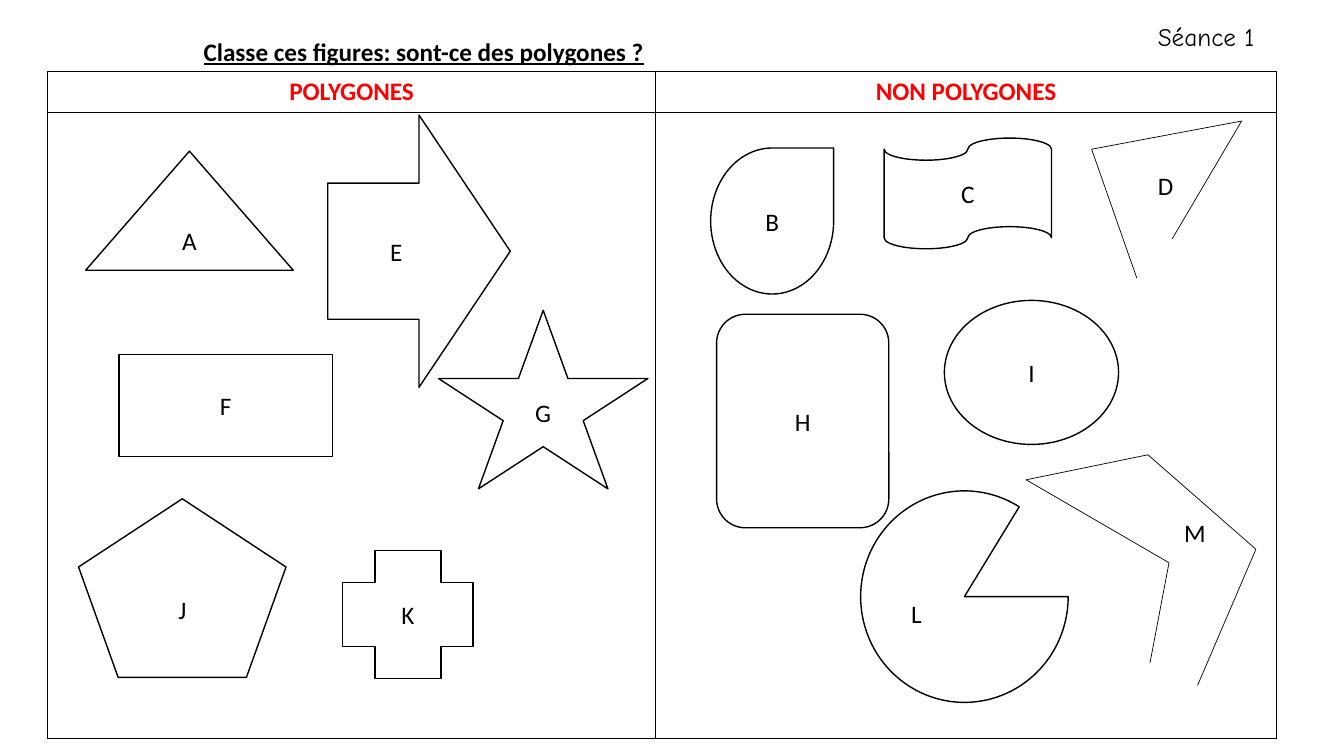
"""Build a worksheet slide that sorts figures into polygons and non-polygons."""
from itertools import pairwise

from lxml.etree import SubElement
from pptx import Presentation
from pptx.dml.color import RGBColor
from pptx.enum.shapes import MSO_CONNECTOR, MSO_SHAPE as SHAPE
from pptx.enum.text import MSO_ANCHOR, MSO_AUTO_SIZE, PP_ALIGN
from pptx.oxml.ns import qn
from pptx.util import Cm, Pt

BLACK = RGBColor(0x00, 0x00, 0x00)
WHITE = RGBColor(0xFF, 0xFF, 0xFF)
RED = RGBColor(0xFF, 0x00, 0x00)


def write(frame, text, color=BLACK, font="Calibri", bold=False, underline=False, align=PP_ALIGN.CENTER):
    para = frame.paragraphs[0]
    para.alignment = align
    span = para.add_run()
    span.text = text
    span.font.name = font
    span.font.size = Pt(18)
    span.font.bold = bold
    span.font.underline = underline
    span.font.color.rgb = color


def add_figure(shapes, kind, place):
    figure = shapes.add_shape(kind, *map(Cm, place))
    figure.shadow.inherit = False
    figure.fill.solid()
    figure.fill.fore_color.rgb = WHITE
    figure.line.color.rgb = BLACK
    figure.line.width = Pt(1)
    return figure


deck = Presentation()
deck.slide_width, deck.slide_height = Cm(33.87), Cm(19.05)
page = deck.slides.add_slide(deck.slide_layouts[6])

table = page.shapes.add_table(2, 2, Cm(1.2), Cm(1.8), Cm(30.97), Cm(16.8)).table
table.first_row = table.horz_banding = False
for column, width in zip(table.columns, (15.32, 15.65)):
    column.width = Cm(width)
for row, height in zip(table.rows, (1.04, 15.76)):
    row.height = Cm(height)
for cell in table.iter_cells():
    properties = cell._tc.get_or_add_tcPr()
    for side in ("a:lnL", "a:lnR", "a:lnT", "a:lnB"):
        border = SubElement(properties, qn(side), w=str(Pt(1)))
        SubElement(SubElement(border, qn("a:solidFill")), qn("a:srgbClr"), val=str(BLACK))
    cell.fill.background()
for column, heading in enumerate(("POLYGONES", "NON POLYGONES")):
    write(table.cell(0, column).text_frame, heading, RED, bold=True)

figures = [
    ("A", SHAPE.ISOSCELES_TRIANGLE, (2.16, 3.81, 5.23, 3)),
    ("F", SHAPE.RECTANGLE, (3, 8.94, 5.38, 2.57)),
    ("E", SHAPE.RIGHT_ARROW, (8.26, 2.9, 4.6, 6.86)),
    ("G", SHAPE.STAR_5_POINT, (11.05, 7.82, 5.28, 4.5)),
    ("H", SHAPE.ROUNDED_RECTANGLE, (18.06, 7.92, 4.34, 5.38)),
    ("I", SHAPE.OVAL, (23.8, 7.57, 4.39, 3.63)),
    ("J", SHAPE.REGULAR_PENTAGON, (1.98, 12.57, 5.23, 4.5)),
    ("K", SHAPE.CROSS, (8.64, 13.87, 3.28, 3.23)),
    ("B", SHAPE.TEAR, (17.91, 3.73, 3.1, 3.68)),
    ("C", SHAPE.FLOWCHART_PUNCHED_TAPE, (22.28, 3.48, 4.22, 2.79)),
]
for letter, kind, place in figures:
    figure = add_figure(page.shapes, kind, place)
    figure.text_frame.vertical_anchor = MSO_ANCHOR.MIDDLE
    write(figure.text_frame, letter)

pie_group = page.shapes.add_group_shape()
pie = add_figure(pie_group.shapes, SHAPE.PIE, (21.69, 12.37, 5.23, 5.33))
pie.adjustments[0], pie.adjustments[1] = 0, 180.83

open_lines = {
    "D": [(28.65, 7.01), (27.51, 3.76), (31.29, 3.05), (29.54, 6.02)],
    "M": [(30.18, 17.27), (31.65, 13.84), (28.93, 11.46), (25.86, 12.09), (29.46, 14.18), (28.98, 16.71)],
}
groups = {"L": pie_group}
for letter, points in open_lines.items():
    groups[letter] = page.shapes.add_group_shape()
    for start, end in pairwise(points):
        line = groups[letter].shapes.add_connector(MSO_CONNECTOR.STRAIGHT, *map(Cm, start + end))
        line.line.color.rgb = BLACK
        line.line.width = Pt(0.5)
        SubElement(line._element.spPr, qn("a:effectLst"))

labels = [
    (page, "Classe ces figures: sont-ce des polygones ?", (4.88, 0.79, 11.71), {"bold": True, "underline": True}),
    (groups["D"], "D", (28.93, 4.17, 0.89), {}),
    (groups["L"], "L", (22.71, 14.94, 0.79), {}),
    (groups["M"], "M", (29.59, 12.9, 1.07), {}),
    (page, "Séance 1", (28.93, 0.41, 3.12), {"font": "Comic Neue"}),
]
for parent, text, place, style in labels:
    box = parent.shapes.add_textbox(*map(Cm, place), Cm(1.02))
    box.text_frame.word_wrap = False
    box.text_frame.auto_size = MSO_AUTO_SIZE.SHAPE_TO_FIT_TEXT
    write(box.text_frame, text, align=PP_ALIGN.LEFT, **style)

deck.save("out.pptx")
